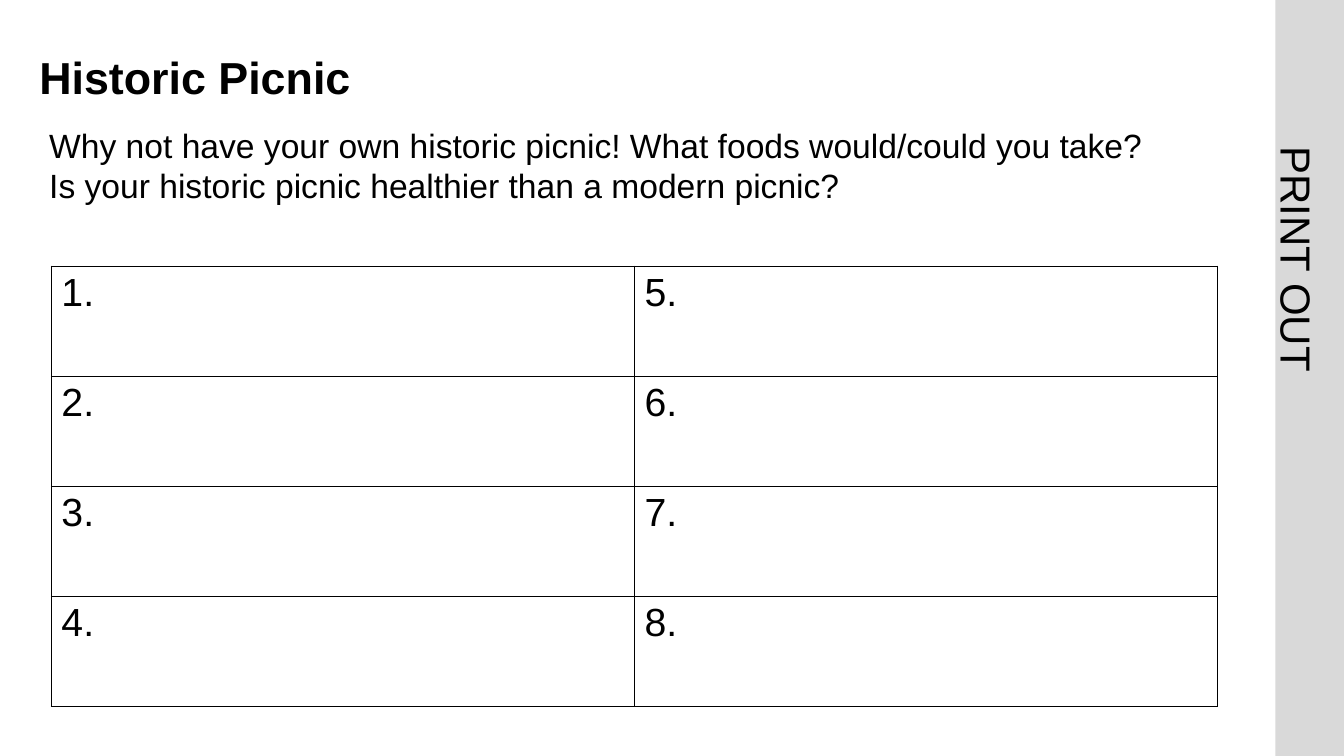
"""Build the Historic Picnic print-out slide."""
from lxml import etree
from pptx import Presentation
from pptx.dml.color import RGBColor
from pptx.enum.shapes import MSO_SHAPE
from pptx.enum.text import MSO_ANCHOR, MSO_AUTO_SIZE, PP_ALIGN
from pptx.oxml.ns import qn
from pptx.util import Inches, Pt

RECTANGLE = MSO_SHAPE.RECTANGLE
MIDDLE = MSO_ANCHOR.MIDDLE
GROW = MSO_AUTO_SIZE.SHAPE_TO_FIT_TEXT
CENTER = PP_ALIGN.CENTER

TITLE = "Historic Picnic"
QUESTIONS = [
    "Why not have your own historic picnic! What foods would/could you take?",
    "Is your historic picnic healthier than a modern picnic?",
]
SIDE_LABEL = "PRINT OUT"
FOOD_ROWS, FOOD_COLUMNS = 4, 2

FONT, BLACK, GREY = "Arial", "000000", "D9D9D9"
SLIDE_W, SLIDE_H = 13.33, 7.5
BAND_LEFT = 12.65
MARGIN = 0.39
TABLE_LEFT, TABLE_TOP, TABLE_W, TABLE_H = 0.51, 2.64, 11.57, 4.37


def color(hex_code):
    return RGBColor.from_string(hex_code)


def style(frame, size, bold=False):
    for paragraph in frame.paragraphs:
        for run in paragraph.runs:
            run.font.name = FONT
            run.font.size = Pt(size)
            run.font.bold = bold
            run.font.color.rgb = color(BLACK)


def add_text(slide, box, lines, size, bold=False, insets=(0.1, 0.05, 0.1, 0.05)):
    label = slide.shapes.add_textbox(*map(Inches, box))
    frame = label.text_frame
    frame.word_wrap = True
    (frame.margin_left, frame.margin_top,
     frame.margin_right, frame.margin_bottom) = map(Inches, insets)
    frame.text = "\n".join(lines)
    style(frame, size, bold)
    return label


def add_borders(cell):
    properties = cell._tc.get_or_add_tcPr()
    for place, side in enumerate(("lnL", "lnR", "lnT", "lnB")):
        border = etree.Element(qn(f"a:{side}"), w=str(Pt(1)))
        fill = etree.SubElement(border, qn("a:solidFill"))
        etree.SubElement(fill, qn("a:srgbClr"), val=BLACK)
        properties.insert(place, border)


def add_side_band(slide):
    band = slide.shapes.add_shape(
        RECTANGLE, Inches(BAND_LEFT), 0, Inches(SLIDE_W - BAND_LEFT), Inches(SLIDE_H))
    band.shadow.inherit = False
    band.fill.solid()
    band.fill.fore_color.rgb = color(GREY)
    band.line.fill.background()

    label = add_text(slide, (11.07, 2.21, 4.01, 0.72), [SIDE_LABEL], 30, insets=(0, 0, 0, 0))
    label.rotation = 90
    label.text_frame.auto_size = GROW
    paragraph = label.text_frame.paragraphs[0]
    paragraph.alignment = CENTER
    paragraph.line_spacing = Pt(58.8)


def add_food_table(slide):
    foods = slide.shapes.add_table(
        FOOD_ROWS, FOOD_COLUMNS,
        *map(Inches, (TABLE_LEFT, TABLE_TOP, TABLE_W, TABLE_H))).table
    foods.first_row = False
    foods.horz_banding = False
    for column in range(FOOD_COLUMNS):
        for row in range(FOOD_ROWS):
            cell = foods.cell(row, column)
            cell.text_frame.text = f"{column * FOOD_ROWS + row + 1}."
            style(cell.text_frame, 28)
            cell.fill.background()
            add_borders(cell)


def main():
    deck = Presentation()
    deck.slide_width, deck.slide_height = Inches(SLIDE_W), Inches(SLIDE_H)
    slide = deck.slides.add_slide(deck.slide_layouts[6])

    add_side_band(slide)
    heading = add_text(slide, (MARGIN, 0.4, 12.03, 0.78), [TITLE], 32, True, (0, 0.05, 0.1, 0.05))
    heading.text_frame.vertical_anchor = MIDDLE
    heading.text_frame.paragraphs[0].line_spacing = 0.9
    questions = add_text(slide, (MARGIN, 1.19, 12.54, 0.91), QUESTIONS, 24)
    questions.text_frame.auto_size = GROW
    add_food_table(slide)
    deck.save("out.pptx")


if __name__ == "__main__":
    main()
